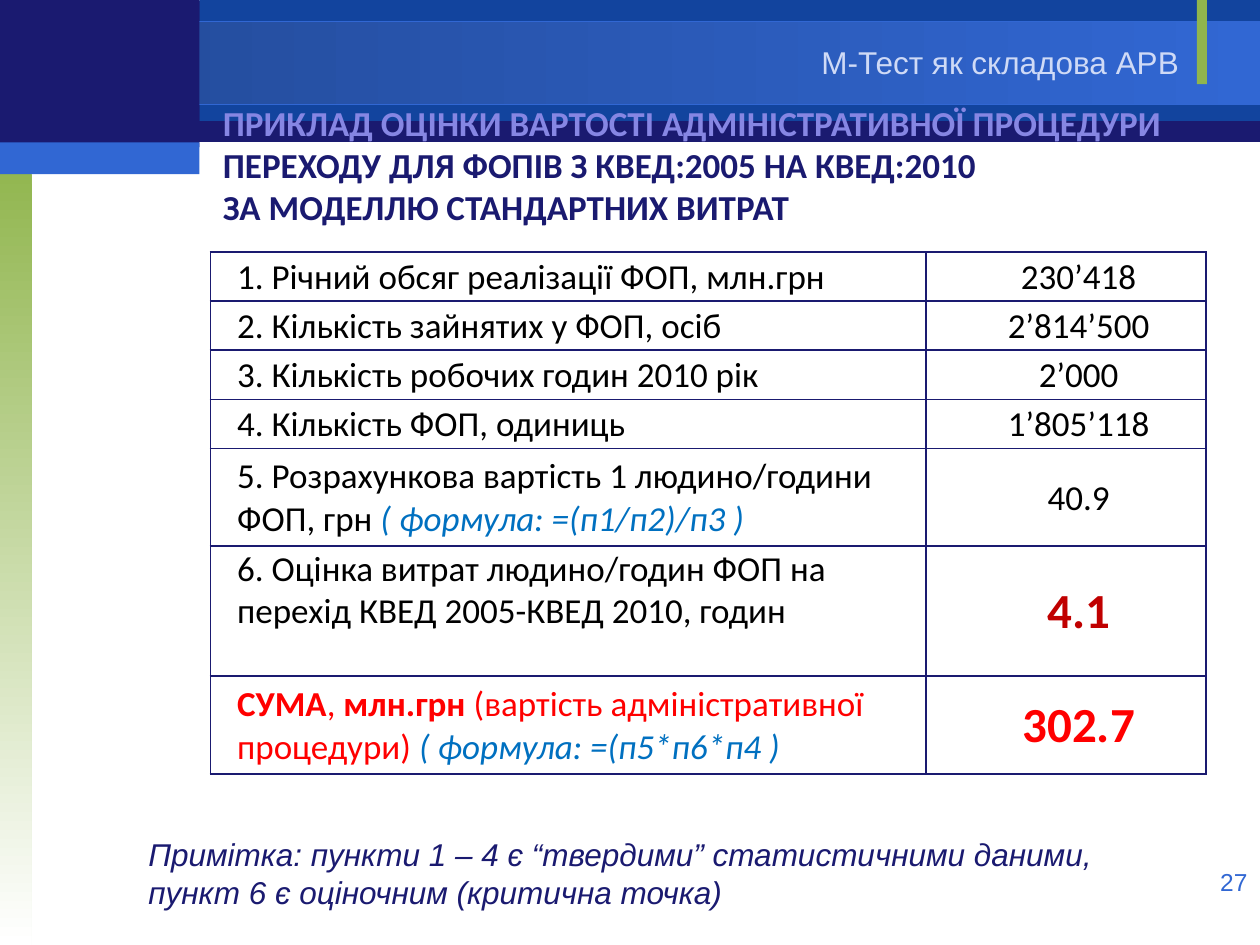
"""Builds the slide with the cost estimate of an administrative procedure."""
from lxml import etree
from pptx import Presentation
from pptx.dml.color import RGBColor
from pptx.enum.shapes import MSO_SHAPE
from pptx.enum.text import MSO_ANCHOR, MSO_AUTO_SIZE, PP_ALIGN
from pptx.oxml.ns import qn
from pptx.util import Cm, Pt

RECTANGLE = MSO_SHAPE.RECTANGLE
TOP, MIDDLE = MSO_ANCHOR.TOP, MSO_ANCHOR.MIDDLE
LEFT, CENTER, RIGHT = PP_ALIGN.LEFT, PP_ALIGN.CENTER, PP_ALIGN.RIGHT
GROW, FIXED = MSO_AUTO_SIZE.SHAPE_TO_FIT_TEXT, MSO_AUTO_SIZE.NONE

NAVY, BLUE, GREEN, BLACK, RED, FORMULA = "1A1A70", "3167D3", "90B54D", "000000", "FF0000", "0070C0"

BANDS = [
    ((0, 0.02, 25.4, 2.84), [NAVY], 0, None),
    ((4.02, 0, 21.38, 2.44), ["12449E"], 0, None),
    ((0, 0.43, 25.4, 1.68), ["234A97", BLUE], 0, BLUE),
    ((0, 3.17, 0.64, 15.88), [GREEN, "FFFFFF"], 270, None),
    ((24.13, 0, 0.2, 1.7), [GREEN], 0, None),
    ((0, 0, 4.02, 2.97), [NAVY], 0, None),
    ((0, 2.87, 4.02, 0.64), [BLUE], 0, None),
]

HEADING = [
    [("ПРИКЛАД ОЦІНКИ ВАРТОСТІ АДМІНІСТРАТИВНОЇ ПРОЦЕДУРИ ", "8686E3", "b"),
     ("ПЕРЕХОДУ ДЛЯ ФОПІВ З КВЕД:2005 НА КВЕД:2010", NAVY, "b")],
    [("ЗА МОДЕЛЛЮ СТАНДАРТНИХ ВИТРАТ", NAVY, "b")],
]
NOTE = [[("Примітка: пункти 1 – 4 є “твердими” статистичними даними, "
          "пункт 6 є оціночним (критична точка)", NAVY, "i")]]
PAGE = [[("27", BLUE, "")]]
TOPIC = [[("М-Тест як складова АРВ", "CFDAF6", "")]]

ROWS = [
    (1, [("1. Річний обсяг реалізації ФОП, млн.грн", BLACK, "")], ("230’418", BLACK, "")),
    (1, [("2. Кількість зайнятих у ФОП, осіб", BLACK, "")], ("2’814’500", BLACK, "")),
    (1, [("3. Кількість робочих годин 2010 рік", BLACK, "")], ("2’000", BLACK, "")),
    (1, [("4. Кількість ФОП, одиниць", BLACK, "")], ("1’805’118", BLACK, "")),
    (2, [("5. Розрахункова вартість 1 людино/години ФОП, грн ", BLACK, ""),
         ("( формула: =(п1/п2)/п3 )", FORMULA, "i")], ("40.9", BLACK, "")),
    (3, [("6. Оцінка витрат людино/годин ФОП на перехід КВЕД 2005-КВЕД 2010, годин", BLACK, "")],
     ("4.1", "C00000", "b")),
    (2, [("СУМА", RED, "b"), (", ", RED, ""), ("млн.грн", RED, "b"),
         (" (вартість адміністративної процедури) ", RED, ""),
         ("( формула: =(п5*п6*п4 )", FORMULA, "i")], ("302.7", RED, "b")),
]
ROW_HEIGHTS = {1: 0.99, 2: 1.97, 3: 2.62}
COLUMN_WIDTHS = (14.43, 5.64)


def paint(color_format, hex_color):
    color_format.rgb = RGBColor.from_string(hex_color)


def write(frame, paragraphs, size, font, align=LEFT):
    for index, runs in enumerate(paragraphs):
        paragraph = frame.add_paragraph() if index else frame.paragraphs[0]
        paragraph.alignment = align
        for words, color, style in runs:
            run = paragraph.add_run()
            run.text = words
            run.font.size, run.font.name = Pt(size), font
            run.font.bold, run.font.italic = "b" in style, "i" in style
            paint(run.font.color, color)


def add_band(shapes, box, colors, angle, outline):
    band = shapes.add_shape(RECTANGLE, *map(Cm, box))
    band.shadow.inherit = False
    if len(colors) > 1:
        band.fill.gradient()
        band.fill.gradient_angle = angle
        for stop, color in zip(band.fill.gradient_stops, colors):
            paint(stop.color, color)
    else:
        band.fill.solid()
        paint(band.fill.fore_color, colors[0])
    if outline:
        paint(band.line.color, outline)
        band.line.width = Pt(0.75)
    else:
        band.line.fill.background()


def add_label(shapes, box, paragraphs, size, align=LEFT, wrap=True, fit=GROW):
    frame = shapes.add_textbox(*map(Cm, box)).text_frame
    frame.word_wrap, frame.auto_size = wrap, fit
    write(frame, paragraphs, size, "Arial", align)


def format_cell(cell, runs, size, align, anchor):
    cell.vertical_anchor = anchor
    cell.margin_left = cell.margin_right = cell.margin_top = Cm(0.03)
    cell.margin_bottom = 0
    cell.fill.background()
    properties = cell._tc.get_or_add_tcPr()
    for index, side in enumerate(("a:lnL", "a:lnR", "a:lnT", "a:lnB")):
        border = etree.Element(qn(side), w=str(Pt(1)))
        fill = etree.SubElement(border, qn("a:solidFill"))
        etree.SubElement(fill, qn("a:srgbClr"), val=NAVY)
        properties.insert(index, border)
    write(cell.text_frame, [runs], size, "Calibri", align)
    indent = cell.text_frame.paragraphs[0]._p.get_or_add_pPr()
    indent.set("marL", str(Cm(0.51)))
    indent.set("indent", "0")


def add_estimate(shapes):
    heights = [ROW_HEIGHTS[lines] for lines, _, _ in ROWS]
    size = (sum(COLUMN_WIDTHS), sum(heights))
    table = shapes.add_table(len(ROWS), 2, Cm(4.24), Cm(5.08), *map(Cm, size)).table
    table.first_row = table.horz_banding = False
    for column, width in zip(table.columns, COLUMN_WIDTHS):
        column.width = Cm(width)
    for index, (lines, item, value) in enumerate(ROWS):
        table.rows[index].height = Cm(heights[index])
        format_cell(table.cell(index, 0), item, 20, LEFT, TOP if lines == 3 else MIDDLE)
        format_cell(table.cell(index, 1), [value], 28 if value[2] else 20, CENTER, MIDDLE)


def main():
    deck = Presentation()
    deck.slide_width, deck.slide_height = Cm(25.4), Cm(19.05)
    slide = deck.slides.add_slide(deck.slide_layouts[5])
    shapes = slide.shapes
    for band in BANDS:
        add_band(shapes, *band)
    add_estimate(shapes)

    title = shapes.title
    title.left, title.top, title.width, title.height = map(Cm, (4.24, 1.91, 20.12, 2.82))
    title.text_frame.vertical_anchor = TOP
    title.text_frame.word_wrap, title.text_frame.auto_size = True, GROW
    write(title.text_frame, HEADING, 20, "Calibri")
    shapes._spTree.append(title._element)

    add_label(shapes, (2.74, 16.71, 20.32, 1.8), NOTE, 18)
    add_label(shapes, (19.48, 17.35, 5.92, 1.32), PAGE, 14, RIGHT, fit=FIXED)
    add_label(shapes, (16.31, 0.74, 7.8, 1.02), TOPIC, 18, wrap=False)
    deck.save("out.pptx")


if __name__ == "__main__":
    main()
